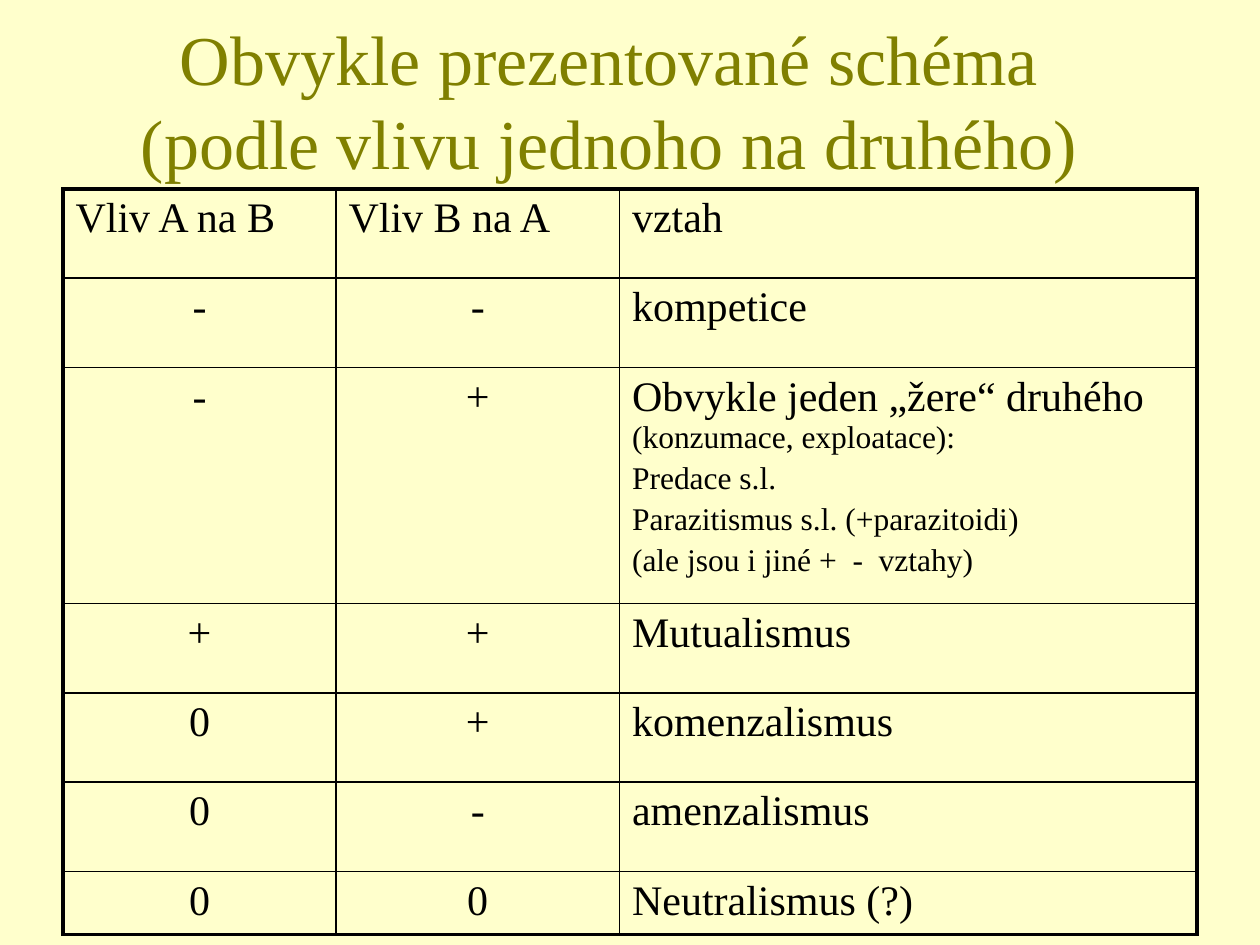
"""Build a slide with a table of ecological interactions between species A and B."""
from lxml.etree import fromstring
from pptx import Presentation
from pptx.dml.color import RGBColor
from pptx.enum.text import MSO_ANCHOR, MSO_AUTO_SIZE, PP_ALIGN
from pptx.util import Pt

FONT = "Times New Roman"
COLORS = {"background": "FFFFCC", "title": "808000", "text": "000000", "border": "000000"}
NAMESPACE = "http://schemas.openxmlformats.org/drawingml/2006/main"
TITLE_LINES = ["Obvykle prezentované schéma", "(podle vlivu jednoho na druhého)"]
CONSUMPTION = [
    [("Obvykle jeden „žere“ druhého ", 24), ("(konzumace, exploatace):", 18)],
    [("Predace s.l.", 18)],
    [("Parazitismus s.l. (+parazitoidi)", 18)],
    [("(ale jsou i jiné +  -  vztahy)", 18)],
]
ROWS = [
    ("Vliv A na B", "Vliv B na A", "vztah"),
    ("-", "-", "kompetice"),
    ("-", "+", CONSUMPTION),
    ("+", "+", "Mutualismus"),
    ("0", "+", "komenzalismus"),
    ("0", "-", "amenzalismus"),
    ("0", "0", "Neutralismus (?)"),
]
COLUMN_WIDTHS = [156, 162, 330]
ROW_HEIGHTS = [51, 51, 135, 51, 51, 51, 36]
THIN, THICK = 1, 2.25


def add_text(paragraph, text, size, color):
    run = paragraph.add_run()
    run.text = text
    run.font.name = FONT
    run.font.size = Pt(size)
    run.font.color.rgb = RGBColor.from_string(COLORS[color])


def add_borders(cell, row, column):
    outer_edges = {
        "lnL": column == 0,
        "lnR": column == len(COLUMN_WIDTHS) - 1,
        "lnT": row == 0,
        "lnB": row == len(ROWS) - 1,
    }
    properties = cell._tc.get_or_add_tcPr()
    for position, (tag, is_outer) in enumerate(outer_edges.items()):
        width = Pt(THICK if is_outer else THIN)
        properties.insert(position, fromstring(
            f'<a:{tag} xmlns:a="{NAMESPACE}" w="{width}"><a:solidFill>'
            f'<a:srgbClr val="{COLORS["border"]}"/></a:solidFill></a:{tag}>'
        ))


def fill_cell(cell, content, row, column):
    cell.margin_left = cell.margin_right = Pt(7.2)
    cell.margin_top = cell.margin_bottom = Pt(3.6)
    cell.fill.background()
    add_borders(cell, row, column)
    paragraphs = [[(content, 24)]] if isinstance(content, str) else content
    for index, runs in enumerate(paragraphs):
        paragraph = cell.text_frame.add_paragraph() if index else cell.text_frame.paragraphs[0]
        is_sign = row > 0 and column < 2
        paragraph.alignment = PP_ALIGN.CENTER if is_sign else PP_ALIGN.LEFT
        paragraph.space_before = Pt(3.6 if index else 0)
        for text, size in runs:
            add_text(paragraph, text, size, "text")


def add_title(slide):
    title = slide.shapes.title
    title.left, title.top, title.width, title.height = Pt(24), Pt(12), Pt(648), Pt(90)
    frame = title.text_frame
    frame.auto_size = MSO_AUTO_SIZE.NONE
    frame.word_wrap = True
    frame.vertical_anchor = MSO_ANCHOR.MIDDLE
    paragraph = frame.paragraphs[0]
    paragraph.alignment = PP_ALIGN.CENTER
    for index, line in enumerate(TITLE_LINES):
        if index:
            paragraph.add_line_break()
        add_text(paragraph, line, 40, "title")


def add_interaction_table(slide):
    table = slide.shapes.add_table(
        len(ROWS), len(COLUMN_WIDTHS), Pt(36), Pt(108),
        Pt(sum(COLUMN_WIDTHS)), Pt(sum(ROW_HEIGHTS)),
    ).table
    table.first_row = table.horz_banding = False
    for column, width in zip(table.columns, COLUMN_WIDTHS):
        column.width = Pt(width)
    for row, height in zip(table.rows, ROW_HEIGHTS):
        row.height = Pt(height)
    for row, contents in enumerate(ROWS):
        for column, content in enumerate(contents):
            fill_cell(table.cell(row, column), content, row, column)


def main():
    presentation = Presentation()
    presentation.slide_width, presentation.slide_height = Pt(720), Pt(540)
    slide = presentation.slides.add_slide(presentation.slide_layouts[5])
    slide.background.fill.solid()
    slide.background.fill.fore_color.rgb = RGBColor.from_string(COLORS["background"])
    add_title(slide)
    add_interaction_table(slide)
    presentation.save("out.pptx")


if __name__ == "__main__":
    main()
